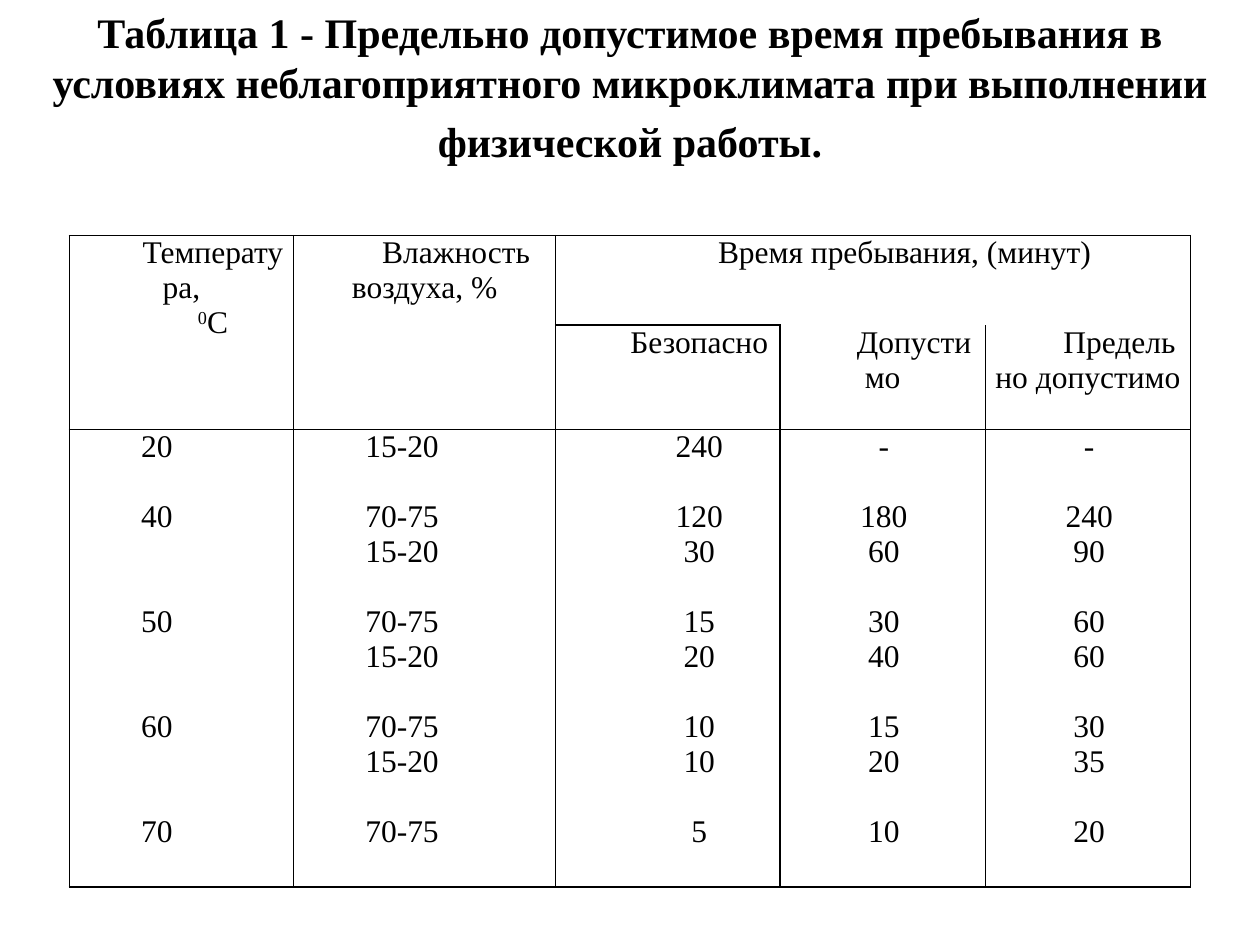
from lxml import etree
from pptx import Presentation
from pptx import util as u
from pptx.dml.color import RGBColor
from pptx.enum import text
from pptx.oxml import ns

INK = {"text": "000000", "line": "000000"}
FONT = "Times New Roman"
MID, JUST = text.PP_ALIGN.CENTER, text.PP_ALIGN.JUSTIFY
LINE = 20


def style(para, size, bold=False):
    for run in para.runs:
        run.font.name = FONT
        run.font.size = u.Pt(size)
        run.font.bold = bold
        run.font.color.rgb = RGBColor.from_string(INK["text"])


def write(cell, lines, align=MID, indent=0.5):
    frame = cell.text_frame
    frame.text = "\n".join(line for line in lines if line)
    paras = iter(frame.paragraphs)
    gap = 0
    for line in lines:
        if not line:
            gap += LINE
            continue
        para = next(paras)
        para.alignment = align
        para.space_before = u.Pt(gap)
        para._p.get_or_add_pPr().set("indent", str(u.Inches(indent)))
        style(para, 18)
        gap = 0


prs = Presentation()
prs.slide_width, prs.slide_height = u.Inches(10), u.Inches(7.5)
slide = prs.slides.add_slide(prs.slide_layouts[5])

title = slide.shapes.title
title.left, title.top = u.Inches(0.31), u.Inches(0)
title.width, title.height = u.Inches(9.38), u.Inches(1.5)
frame = title.text_frame
frame.text = ("Таблица 1 - Предельно допустимое время пребывания в условиях "
              "неблагоприятного микроклимата при выполнении\nфизической работы.")
frame.word_wrap = True
frame.auto_size = text.MSO_AUTO_SIZE.NONE
frame.vertical_anchor = text.MSO_ANCHOR.TOP
for para in frame.paragraphs:
    para.alignment = MID
    para.space_before = u.Pt(4.8)
    style(para, 24, True)

widths = [1.78, 2.08, 1.78, 1.63, 1.63]
heights = [0.71, 0.82, 3.63]
table = slide.shapes.add_table(3, 5, u.Inches(0.55), u.Inches(1.87),
                               u.Inches(sum(widths)), u.Inches(sum(heights))).table
table.first_row = table.horz_banding = False
for col, width in zip(table.columns, widths):
    col.width = u.Inches(width)
for row, height in zip(table.rows, heights):
    row.height = u.Inches(height)

no_line = {(0, 2, "B"), (0, 3, "B"), (0, 4, "B"), (1, 3, "T"), (1, 4, "T")}
for r in range(3):
    for c in range(5):
        cell = table.cell(r, c)
        cell.fill.background()
        cell.margin_left = cell.margin_right = u.Inches(0.07)
        cell.margin_top = cell.margin_bottom = 0
        props = cell._tc.get_or_add_tcPr()
        for i, side in enumerate("LRTB"):
            edge = etree.Element(ns.qn("a:ln" + side), w=str(u.Pt(1)))
            if (r, c, side) in no_line:
                etree.SubElement(edge, ns.qn("a:noFill"))
            else:
                fill = etree.SubElement(edge, ns.qn("a:solidFill"))
                etree.SubElement(fill, ns.qn("a:srgbClr"), val=INK["line"])
            props.insert(i, edge)

table.cell(0, 0).merge(table.cell(1, 0))
table.cell(0, 1).merge(table.cell(1, 1))
table.cell(0, 2).merge(table.cell(0, 4))

heads = {
    (0, 0): ["Температура,", "0"],
    (0, 1): ["Влажность воздуха, %"],
    (0, 2): ["Время пребывания, (минут)"],
    (1, 2): ["Безопасно"],
    (1, 3): ["Допустимо"],
    (1, 4): ["Предельно допустимо"],
}
for (r, c), lines in heads.items():
    write(table.cell(r, c), lines)

unit = table.cell(0, 0).text_frame.paragraphs[1]
unit.add_run().text = "С"
style(unit, 18)
unit.runs[0]._r.get_or_add_rPr().set("baseline", "30000")

body = [
    ("20||40|||50|||60|||70", JUST, 0.5),
    ("15-20||70-75|15-20||70-75|15-20||70-75|15-20||70-75", JUST, 0.5),
    ("240||120|30||15|20||10|10||5", MID, 0.5),
    ("-||180|60||30|40||15|20||10", MID, 0.02),
    ("-||240|90||60|60||30|35||20", MID, 0.02),
]
for c, (lines, align, indent) in enumerate(body):
    write(table.cell(2, c), lines.split("|"), align, indent)

prs.save("out.pptx")
